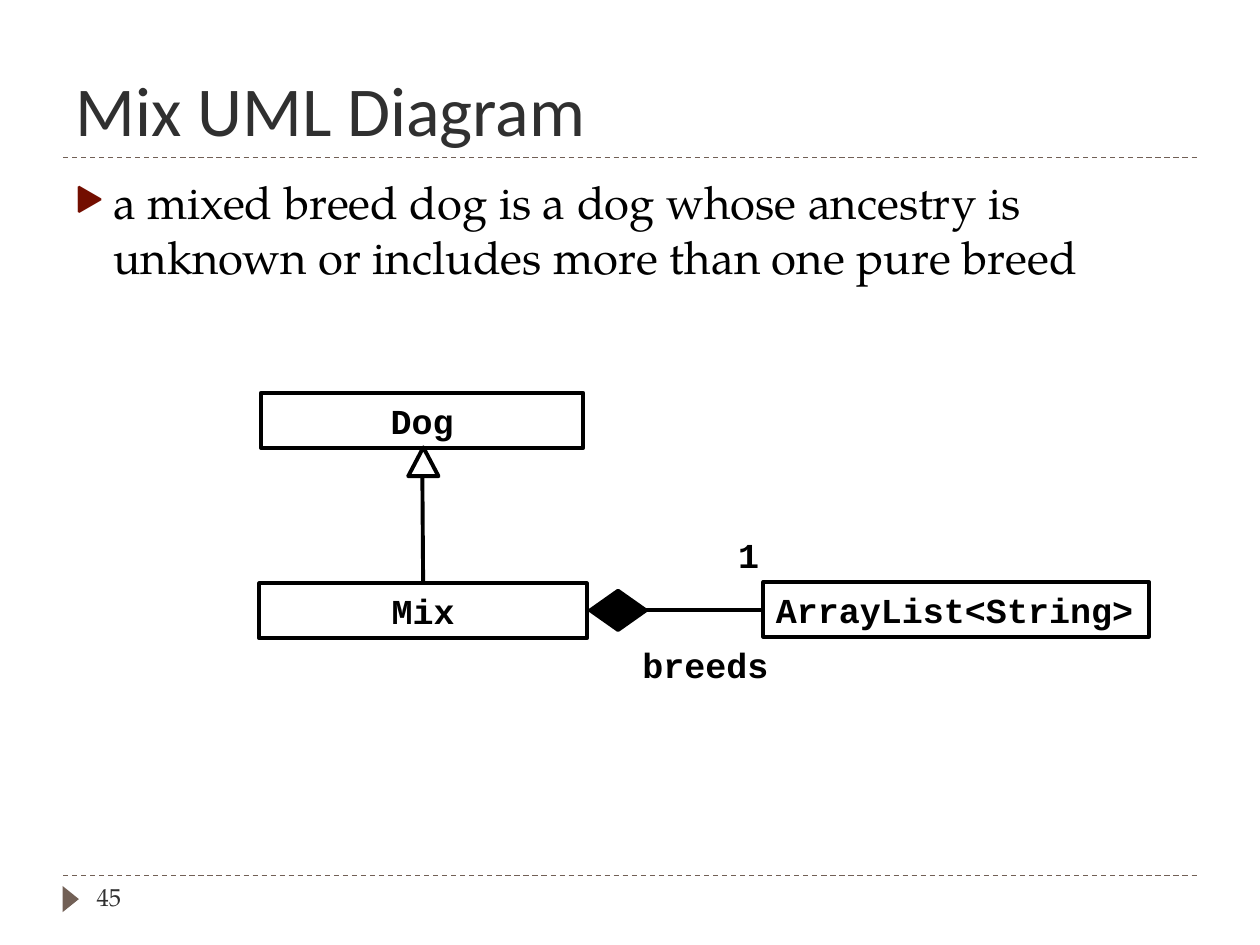
from lxml.etree import SubElement
from pptx import Presentation
from pptx.dml.color import RGBColor
from pptx.enum.dml import MSO_LINE
from pptx.enum.shapes import MSO_CONNECTOR, MSO_SHAPE
from pptx.enum.text import MSO_ANCHOR, MSO_AUTO_SIZE, PP_ALIGN
from pptx.oxml.ns import qn
from pptx.util import Cm, Pt

BLACK = RGBColor(0x00, 0x00, 0x00)
WHITE = RGBColor(0xFF, 0xFF, 0xFF)
CHARCOAL = RGBColor(0x30, 0x30, 0x30)
TAUPE = RGBColor(0x72, 0x60, 0x56)
BULLET_RED = RGBColor(0x73, 0x0E, 0x00)
SERIF = "TeX Gyre Pagella"


def add_run(paragraph, text, font_name, size, color, bold=False):
    run = paragraph.add_run()
    run.text = text
    run.font.name = font_name
    run.font.size = Pt(size)
    run.font.color.rgb = color
    run.font.bold = bold


def add_line(x1, y1, x2, y2, color, width, dash=None):
    """Draw a shadowless straight line; coordinates are in centimetres."""
    line = slide.shapes.add_connector(
        MSO_CONNECTOR.STRAIGHT, Cm(x1), Cm(y1), Cm(x2), Cm(y2))
    line.line.color.rgb = color
    line.line.width = Pt(width)
    if dash:
        line.line.dash_style = dash
    SubElement(line._element.spPr, qn("a:effectLst"))


prs = Presentation()
prs.slide_width, prs.slide_height = Cm(25.4), Cm(19.05)
slide = prs.slides.add_slide(prs.slide_layouts[1])

# Rules and footer marker
for rule_y in (17.65, 3.18):
    add_line(1.27, rule_y, 24.13, rule_y, TAUPE, 0.75, MSO_LINE.DASH)
marker = slide.shapes.add_shape(
    MSO_SHAPE.ISOSCELES_TRIANGLE, Cm(1.16), Cm(17.96), Cm(0.53), Cm(0.33))
marker.rotation = 90
marker.shadow.inherit = False
marker.fill.solid()
marker.fill.fore_color.rgb = TAUPE
marker.line.fill.background()

# Title
title = slide.shapes.title
title.left, title.top, title.width, title.height = Cm(1.27), Cm(0.43), Cm(22.86), Cm(2.74)
title.text_frame.vertical_anchor = MSO_ANCHOR.BOTTOM
title.text_frame.auto_size = MSO_AUTO_SIZE.NONE
heading = title.text_frame.paragraphs[0]
heading.alignment = PP_ALIGN.LEFT
add_run(heading, "Mix UML Diagram", "Calibri", 40, CHARCOAL)

# Definition
body = slide.placeholders[1]
body.left, body.top, body.width, body.height = Cm(1.27), Cm(3.38), Cm(22.86), Cm(13.72)
body.text_frame.auto_size = MSO_AUTO_SIZE.NONE
definition = body.text_frame.paragraphs[0]
definition.space_before = Pt(6)
bullet = definition._p.get_or_add_pPr()
bullet.set("marL", str(Cm(0.76)))
bullet.set("indent", str(-Cm(0.76)))
bullet_color = SubElement(bullet, qn("a:buClr"))
SubElement(bullet_color, qn("a:srgbClr"), val=str(BULLET_RED))
SubElement(bullet, qn("a:buSzPct"), val="76000")
SubElement(bullet, qn("a:buFont"), typeface=SERIF)
SubElement(bullet, qn("a:buChar"), char="▶")
add_run(definition,
        "a mixed breed dog is a dog whose ancestry is unknown "
        "or includes more than one pure breed", SERIF, 26, BLACK)

# Slide number
number = slide.shapes.add_textbox(Cm(1.7), Cm(17.65), Cm(5.51), Cm(1.02))
number.text_frame.word_wrap = True
add_run(number.text_frame.paragraphs[0], "45", SERIF, 14, CHARCOAL)

# Class boxes
for class_name, left, top, width, align in (
    ("Dog", 5.26, 7.92, 6.5, PP_ALIGN.CENTER),
    ("Mix", 5.23, 11.76, 6.6, PP_ALIGN.CENTER),
    ("ArrayList<String>", 15.39, 11.73, 7.77, PP_ALIGN.LEFT),
):
    box = slide.shapes.add_shape(
        MSO_SHAPE.RECTANGLE, Cm(left), Cm(top), Cm(width), Cm(1.11))
    box.shadow.inherit = False
    box.fill.background()
    box.line.color.rgb = BLACK
    box.line.width = Pt(2.25)
    box.text_frame.word_wrap = False
    box.text_frame.paragraphs[0].alignment = align
    add_run(box.text_frame.paragraphs[0], class_name, "Courier New", 20, BLACK, True)

# Relations: inheritance and composition
add_line(8.51, 9.04, 8.53, 11.76, BLACK, 2.25)
add_line(13, 12.29, 15.39, 12.29, BLACK, 2.25)
for head, left, top, width, height, fill in (
    (MSO_SHAPE.DIAMOND, 11.9, 11.91, 1.12, 0.79, BLACK),
    (MSO_SHAPE.ISOSCELES_TRIANGLE, 8.23, 9.02, 0.61, 0.58, WHITE),
):
    end = slide.shapes.add_shape(head, Cm(left), Cm(top), Cm(width), Cm(height))
    end.shadow.inherit = False
    end.fill.solid()
    end.fill.fore_color.rgb = fill
    end.line.color.rgb = BLACK
    end.line.width = Pt(2.25)

# Multiplicity and role
for text, left, top, width in (("1", 14.63, 10.64, 0.94), ("breeds", 12.7, 12.85, 3.07)):
    label = slide.shapes.add_textbox(Cm(left), Cm(top), Cm(width), Cm(1.11))
    label.text_frame.word_wrap = False
    add_run(label.text_frame.paragraphs[0], text, "Courier New", 20, BLACK, True)

prs.save("out.pptx")
